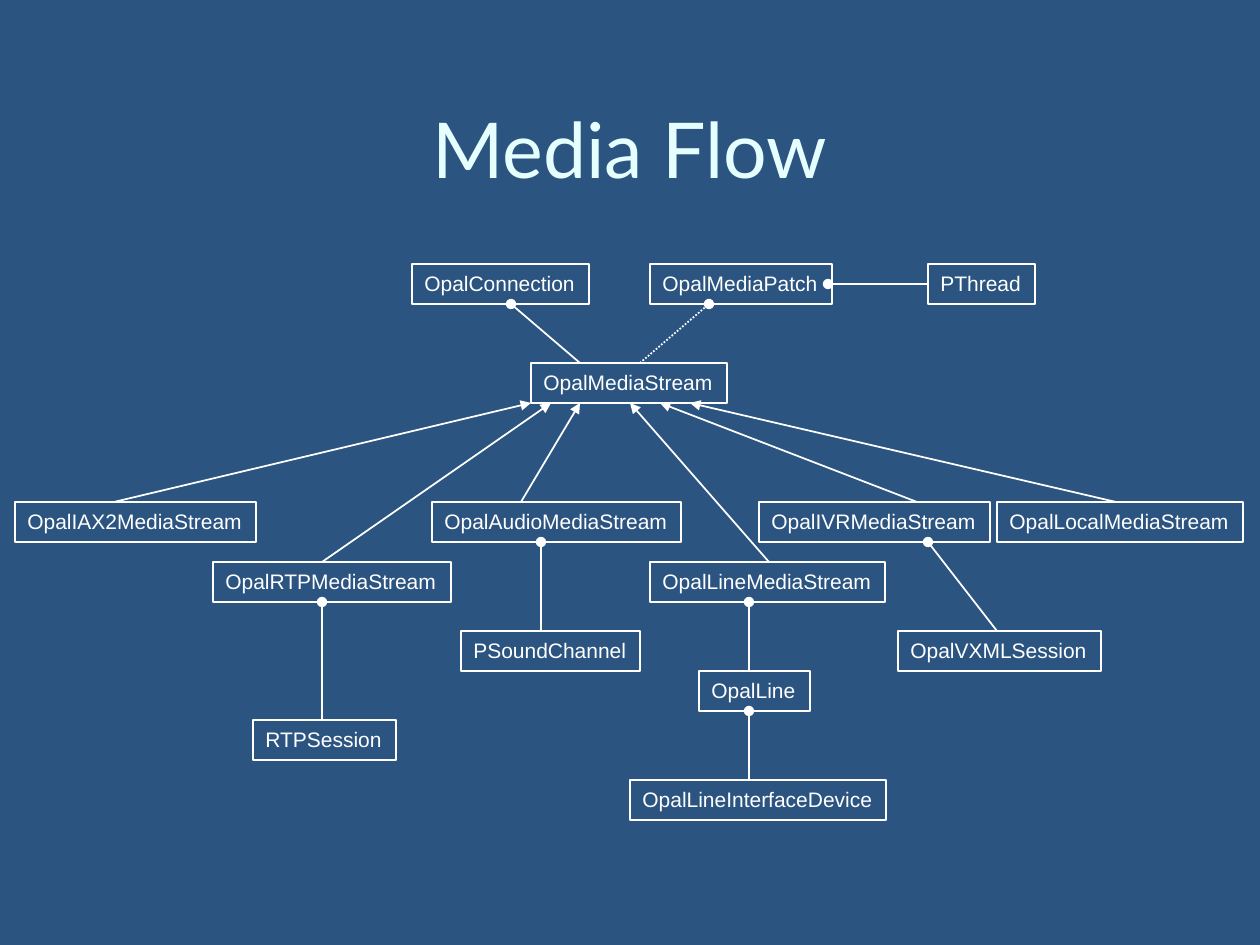
"""Build the Media Flow class diagram slide."""
from dataclasses import dataclass

from pptx import Presentation
from pptx.dml.color import RGBColor
from pptx.enum.dml import MSO_LINE_DASH_STYLE as Dash
from pptx.enum.shapes import MSO_CONNECTOR as Connector, MSO_SHAPE as Preset
from pptx.enum.text import MSO_ANCHOR as Anchor, MSO_AUTO_SIZE as AutoSize, PP_ALIGN as Align
from pptx.oxml.ns import qn
from pptx.slide import Slide
from pptx.util import Emu, Pt
from lxml.etree import SubElement

PX_PER_INCH = 126
BOX_HEIGHT = 40
COLORS = {"background": "2B5481", "title": "E5FFFF", "diagram": "FFFFFF"}


@dataclass(frozen=True)
class ClassBox:
    name: str
    left: int
    top: int
    width: int

    @property
    def bottom(self) -> int:
        return self.top + BOX_HEIGHT


@dataclass(frozen=True)
class Link:
    child: str
    child_x: int
    parent: str
    parent_x: int
    head: str
    dotted: bool = False


BOXES = [
    ClassBox("OpalConnection", 412, 264, 177),
    ClassBox("OpalMediaPatch", 650, 264, 182),
    ClassBox("PThread", 928, 264, 107),
    ClassBox("OpalMediaStream", 531, 363, 196),
    ClassBox("OpalIAX2MediaStream", 15, 502, 241),
    ClassBox("OpalAudioMediaStream", 432, 502, 249),
    ClassBox("OpalIVRMediaStream", 759, 502, 231),
    ClassBox("OpalLocalMediaStream", 997, 502, 246),
    ClassBox("OpalRTPMediaStream", 213, 562, 238),
    ClassBox("OpalLineMediaStream", 650, 562, 235),
    ClassBox("PSoundChannel", 461, 631, 179),
    ClassBox("OpalVXMLSession", 898, 631, 203),
    ClassBox("OpalLine", 699, 671, 111),
    ClassBox("RTPSession", 253, 720, 143),
    ClassBox("OpalLineInterfaceDevice", 630, 780, 256),
]
LINKS = [
    Link("OpalIAX2MediaStream", 114, "OpalMediaStream", 531, "triangle"),
    Link("OpalRTPMediaStream", 322, "OpalMediaStream", 551, "triangle"),
    Link("OpalAudioMediaStream", 521, "OpalMediaStream", 580, "triangle"),
    Link("OpalLineMediaStream", 769, "OpalMediaStream", 630, "triangle"),
    Link("OpalIVRMediaStream", 917, "OpalMediaStream", 660, "triangle"),
    Link("OpalLocalMediaStream", 1116, "OpalMediaStream", 690, "triangle"),
    Link("OpalMediaStream", 580, "OpalConnection", 511, "oval"),
    Link("OpalMediaStream", 640, "OpalMediaPatch", 709, "oval", dotted=True),
    Link("RTPSession", 322, "OpalRTPMediaStream", 322, "oval"),
    Link("PSoundChannel", 541, "OpalAudioMediaStream", 541, "oval"),
    Link("OpalLine", 749, "OpalLineMediaStream", 749, "oval"),
    Link("OpalLineInterfaceDevice", 749, "OpalLine", 749, "oval"),
    Link("OpalVXMLSession", 997, "OpalIVRMediaStream", 928, "oval"),
]


def px(length: int) -> Emu:
    return Emu(round(length * 914400 / PX_PER_INCH))


def color(name: str) -> RGBColor:
    return RGBColor.from_string(COLORS[name])


def write(paragraph, text: str, font_name: str, size: int, color_name: str, align: Align) -> None:
    paragraph.text = text
    paragraph.alignment = align
    paragraph.font.name = font_name
    paragraph.font.size = Pt(size)
    paragraph.font.color.rgb = color(color_name)


def draw_title(slide: Slide, text: str) -> None:
    frame = slide.shapes.add_textbox(px(63), px(53), px(1134), px(189)).text_frame
    frame.word_wrap = True
    frame.vertical_anchor = Anchor.MIDDLE
    write(frame.paragraphs[0], text, "Lato", 44, "title", Align.CENTER)


def draw_box(slide: Slide, box: ClassBox) -> None:
    shape = slide.shapes.add_shape(
        Preset.RECTANGLE, px(box.left), px(box.top), px(box.width), px(BOX_HEIGHT))
    shape.shadow.inherit = False
    shape.fill.background()
    shape.line.color.rgb = color("diagram")
    shape.line.width = Pt(1)
    frame = shape.text_frame
    frame.word_wrap = False
    frame.auto_size = AutoSize.SHAPE_TO_FIT_TEXT
    frame.vertical_anchor = Anchor.TOP
    write(frame.paragraphs[0], box.name, "Arial", 12, "diagram", Align.LEFT)


def draw_line(slide: Slide, start: tuple[int, int], end: tuple[int, int],
              head: str, dotted: bool = False) -> None:
    connector = slide.shapes.add_connector(Connector.STRAIGHT, *map(px, start + end))
    line = connector.line
    line.color.rgb = color("diagram")
    line.width = Pt(1)
    if dotted:
        line.dash_style = Dash.ROUND_DOT
    properties = connector._element.spPr
    SubElement(properties.find(qn("a:ln")), qn("a:tailEnd"), type=head)
    SubElement(properties, qn("a:effectLst"))


def main() -> None:
    presentation = Presentation()
    presentation.slide_width, presentation.slide_height = px(1260), px(945)
    slide = presentation.slides.add_slide(presentation.slide_layouts[6])
    slide.background.fill.solid()
    slide.background.fill.fore_color.rgb = color("background")

    draw_title(slide, "Media Flow")
    for box in BOXES:
        draw_box(slide, box)
    boxes = {box.name: box for box in BOXES}
    for link in LINKS:
        draw_line(slide, (link.child_x, boxes[link.child].top),
                  (link.parent_x, boxes[link.parent].bottom), link.head, link.dotted)
    thread = boxes["PThread"]
    middle = thread.top + BOX_HEIGHT // 2
    draw_line(slide, (thread.left, middle), (828, middle), "oval")
    presentation.save("out.pptx")


if __name__ == "__main__":
    main()
